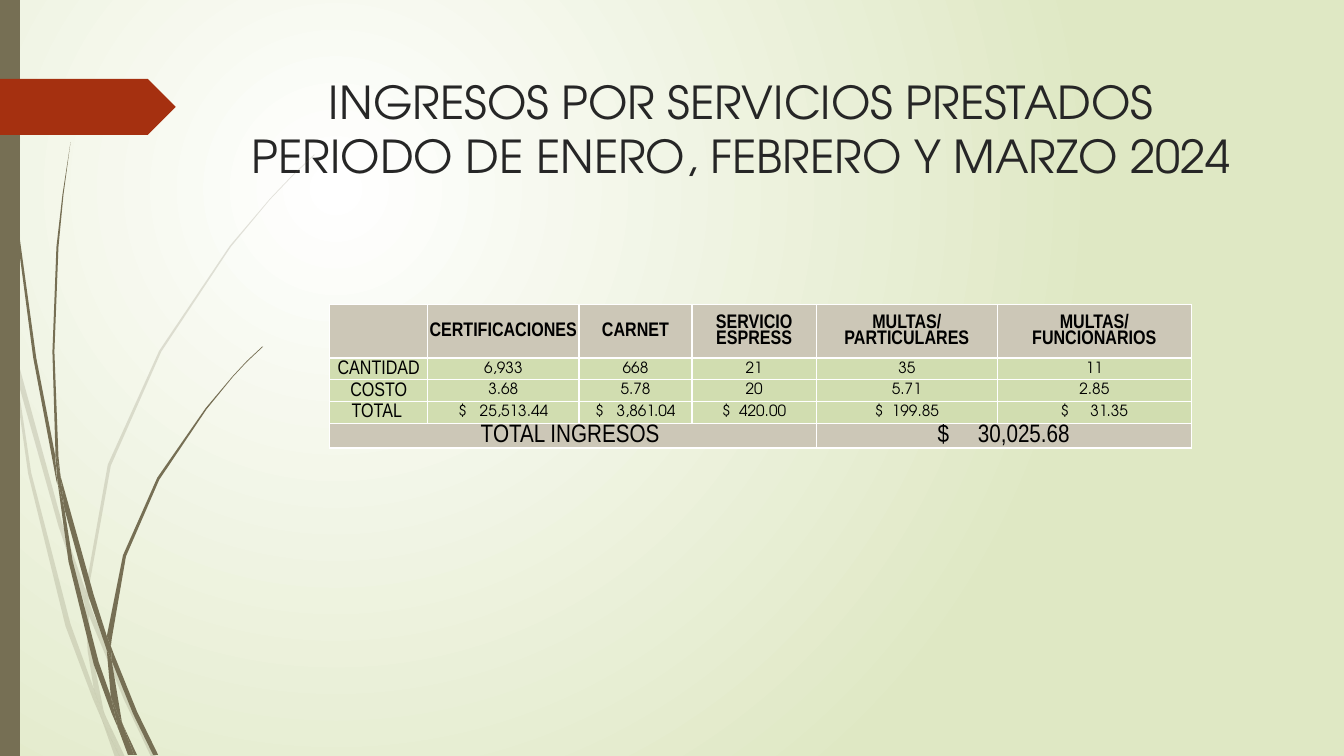
from lxml.etree import SubElement
from pptx import Presentation
from pptx.dml.color import RGBColor
from pptx.enum.shapes import MSO_SHAPE
from pptx.enum.text import MSO_ANCHOR, MSO_AUTO_SIZE, PP_ALIGN
from pptx.oxml import parse_xml
from pptx.oxml.ns import nsdecls, qn
from pptx.util import Cm, Pt

TITLE = "INGRESOS POR SERVICIOS PRESTADOS\vPERIODO DE ENERO, FEBRERO Y MARZO 2024"
HEAD = ["", "CERTIFICACIONES", "CARNET", "SERVICIO ESPRESS",
        "MULTAS/PARTICULARES", "MULTAS/FUNCIONARIOS"]
BODY = [
    ["CANTIDAD", "6,933", "668", "21", "35", "11"],
    ["COSTO", "3.68", "5.78", "20", "5.71", "2.85"],
    ["TOTAL ", "$   25,513.44", "$   3,861.04", "$  420.00", "$  199.85", "$     31.35"],
]
FOOT = ["TOTAL INGRESOS ", "", "", "", "$     30,025.68", ""]
SPANS = [(0, 3), (4, 5)]
COLS = [2.47, 3.81, 2.85, 3.13, 4.57, 4.88]
ROWS = [1.35, 0.55, 0.55, 0.55, 0.62]

INCH = 2.54
PALE = [
    [(0.11, 3.5), (0.09, 3.22), (0, 2.82), (0, 2.99), (0.1, 3.44)],
    [(0.58, 5.22), (0.84, 5.99), (0.85, 5.86), (0.62, 5.2), (0.14, 3.45), (0.17, 3.76)],
    [(0.92, 6.07), (0.88, 5.96), (0.88, 6.1), (1.23, 6.94), (1.5, 7.51), (1.55, 7.51),
     (1.27, 6.92)],
    [(1.19, 7.51), (1.24, 7.51), (1.05, 7.11)],
    [(0.93, 6.83), (0.7, 6.19), (0.31, 4.69), (0.17, 3.76), (0.11, 3.5), (0.28, 4.7),
     (0.65, 6.21), (0.92, 6.93), (1.01, 7.14), (0.99, 7.07)],
    [(0.84, 5.99), (0.87, 6.46), (0.93, 6.83), (0.96, 6.92), (1.05, 7.11), (1.03, 7.06),
     (0.91, 6.46), (0.88, 6.1), (0.88, 6.08)],
    [(0.88, 5.84), (1.1, 4.62), (1.6, 3.49), (2.29, 2.45), (2.68, 1.98), (2.9, 1.75),
     (3.12, 1.54), (3.12, 1.53), (2.89, 1.75), (2.68, 1.97), (2.28, 2.44), (1.58, 3.48),
     (1.07, 4.61), (0.85, 5.84), (0.85, 5.86), (0.88, 5.96)],
    [(1.01, 7.14), (1.14, 7.51), (1.19, 7.51)],
    [(0.88, 6.08), (0.88, 6.1), (0.88, 5.96), (0.85, 5.86), (0.84, 5.99)],
    [(0.96, 6.92), (0.93, 6.83), (0.99, 7.07), (1.01, 7.14), (1.19, 7.51), (1.05, 7.11)],
]
DARK = [
    [(0.07, 1.1), (0.17, 2.33), (0.33, 3.55), (0.56, 4.77), (0.57, 4.81), (0.55, 4.57),
     (0.55, 4.53), (0.36, 3.55), (0.19, 2.32), (0.08, 1.09), (0.05, 0.48), (0.04, 0),
     (0.03, 0), (0.04, 0.48)],
    [(0.88, 5.92), (1.06, 6.45), (1.06, 6.31), (0.93, 5.9), (0.6, 4.72), (0.64, 5.05)],
    [(1.13, 6.49), (1.1, 6.41), (1.11, 6.56), (1.32, 7.08), (1.52, 7.49), (1.57, 7.49),
     (1.36, 7.06)],
    [(1.1, 6.91), (0.98, 6.57), (0.72, 5.56), (0.64, 5.05), (0.57, 4.77), (0.68, 5.57),
     (0.93, 6.59), (1.11, 7.08), (1.17, 7.22), (1.16, 7.17)],
    [(0.6, 4.72), (0.58, 4.53), (0.54, 3.49), (0.58, 2.45), (0.63, 1.93), (0.7, 1.41),
     (0.62, 1.93), (0.56, 2.45), (0.52, 3.49), (0.55, 4.49)],
    [(1.33, 7.49), (1.36, 7.49), (1.22, 7.19)],
    [(0.57, 4.77), (0.64, 5.05), (0.6, 4.72), (0.55, 4.49), (0.55, 4.53)],
    [(1.11, 6.33), (1.25, 5.52), (1.58, 4.76), (2.05, 4.06), (2.31, 3.74), (2.45, 3.59),
     (2.61, 3.44), (2.6, 3.44), (2.45, 3.58), (2.31, 3.73), (2.04, 4.05), (1.56, 4.74),
     (1.22, 5.51), (1.06, 6.31), (1.1, 6.41)],
    [(1.17, 7.22), (1.27, 7.49), (1.31, 7.49)],
    [(1.06, 6.45), (1.1, 6.91), (1.16, 7.06), (1.22, 7.19), (1.21, 7.16), (1.11, 6.56),
     (1.09, 6.51)],
    [(1.06, 6.45), (1.09, 6.51), (1.11, 6.56), (1.1, 6.41), (1.06, 6.31)],
    [(1.16, 7.06), (1.1, 6.91), (1.16, 7.17), (1.17, 7.22), (1.3, 7.49), (1.33, 7.49),
     (1.22, 7.19)],
]

WHITE = RGBColor(0xFF, 0xFF, 0xFF)
BLACK = RGBColor(0, 0, 0)
INK = RGBColor(0x26, 0x26, 0x26)
LIME = RGBColor(0xDF, 0xE8, 0xC4)
OLIVE = RGBColor(0x76, 0x6F, 0x54)
RUST = RGBColor(0xA5, 0x30, 0x10)
SAND = RGBColor(0xCC, 0xC7, 0xB7)
MOSS = RGBColor(0xD1, 0xDD, 0xB0)

THIN, WIDE = "Arial Narrow", "TeX Gyre Adventor"
BIG = dict(name=WIDE, size=Pt(32.4), bold=False)
TOP = dict(name=THIN, size=Pt(14), bold=True)
SIDE = dict(name=THIN, size=Pt(14), bold=False)
DATA = dict(name=WIDE, size=Pt(11), bold=False)
SUM = dict(name=THIN, size=Pt(18), bold=False)
PAD = dict(margin_left=Cm(0.02), margin_right=Cm(0.02), margin_top=Cm(0.02),
           margin_bottom=0, vertical_anchor=MSO_ANCHOR.MIDDLE)


def put(item, form):
    """Set each attribute in form on item."""
    for key, val in form.items():
        setattr(item, key, val)


def write(par, form, tint, gap):
    """Format one centred paragraph."""
    put(par, dict(alignment=PP_ALIGN.CENTER, line_spacing=gap))
    for run in par.runs:
        put(run.font, form)
        run.font.color.rgb = tint


def paint(shape, tint, alpha=None):
    """Give a shape a flat fill without line or shadow."""
    shape.shadow.inherit = False
    shape.fill.solid()
    shape.fill.fore_color.rgb = tint
    shape.line.fill.background()
    if alpha:
        clr = next(shape.element.spPr.iter(qn("a:srgbClr")))
        SubElement(clr, qn("a:alpha"), val=str(alpha * 1000))


def blade(slide, dots, alpha=None):
    """Draw one piece of a grass stem."""
    edge = [(Cm(x * INCH), Cm(y * INCH)) for x, y in dots]
    pen = slide.shapes.build_freeform(*edge[0])
    pen.add_line_segments(edge[1:], close=True)
    paint(pen.convert_to_shape(), OLIVE, alpha)


def glow(slide):
    """Fill the background with a round gradient."""
    fill = slide.background.fill
    fill.gradient()
    for stop, tint in zip(fill.gradient_stops, (WHITE, LIME)):
        stop.color.rgb = tint
    grad = next(slide.element.iter(qn("a:gradFill")))
    grad.remove(grad.find(qn("a:lin")))
    ring = SubElement(grad, qn("a:path"), path="circle")
    SubElement(ring, qn("a:fillToRect"), l="50000", t="50000", r="100000", b="100000")


def frame(cell):
    """Give a cell thin white borders."""
    prop = cell._tc.get_or_add_tcPr()
    for i, side in enumerate("LRTB"):
        prop.insert(i, parse_xml(
            f'<a:ln{side} {nsdecls("a")} w="12700"><a:solidFill>'
            f'<a:srgbClr val="{WHITE}"/></a:solidFill></a:ln{side}>'))


def style(row, col):
    """Choose the font of a table cell."""
    if row == 0:
        return TOP
    if row > len(BODY):
        return SUM
    return DATA if col else SIDE


def chart(slide):
    """Build the income table."""
    rows = [HEAD, *BODY, FOOT]
    grid = slide.shapes.add_table(len(rows), len(COLS), Cm(8.31), Cm(7.67),
                                  Cm(sum(COLS)), Cm(sum(ROWS))).table
    for col, wide in zip(grid.columns, COLS):
        col.width = Cm(wide)
    for row, high in zip(grid.rows, ROWS):
        row.height = Cm(high)
    for r, row in enumerate(rows):
        for c, text in enumerate(row):
            cell = grid.cell(r, c)
            put(cell, dict(PAD, text=text))
            cell.fill.solid()
            cell.fill.fore_color.rgb = MOSS if 0 < r <= len(BODY) else SAND
            frame(cell)
            write(cell.text_frame.paragraphs[0], style(r, c), BLACK, 0.9)
    last = len(rows) - 1
    for start, end in SPANS:
        grid.cell(last, start).merge(grid.cell(last, end))


def main():
    """Build and save the slide."""
    deck = Presentation()
    put(deck, dict(slide_width=Cm(33.87), slide_height=Cm(19.05)))
    slide = deck.slides.add_slide(deck.slide_layouts[5])
    glow(slide)
    for dots in PALE:
        blade(slide, dots, 20)
    for dots in DARK:
        blade(slide, dots)
    add = slide.shapes.add_shape
    paint(add(MSO_SHAPE.RECTANGLE, 0, 0, Cm(0.5), Cm(19.05)), OLIVE)
    paint(add(MSO_SHAPE.PENTAGON, 0, Cm(1.99), Cm(4.43), Cm(1.41)), RUST)
    title = slide.shapes.title
    put(title, dict(left=Cm(5.41), top=Cm(1.73), width=Cm(26.54), height=Cm(4.22)))
    put(title.text_frame, dict(text=TITLE, vertical_anchor=MSO_ANCHOR.TOP,
                               auto_size=MSO_AUTO_SIZE.NONE, word_wrap=True))
    write(title.text_frame.paragraphs[0], BIG, INK, 1.0)
    chart(slide)
    deck.save("out.pptx")


if __name__ == "__main__":
    main()
